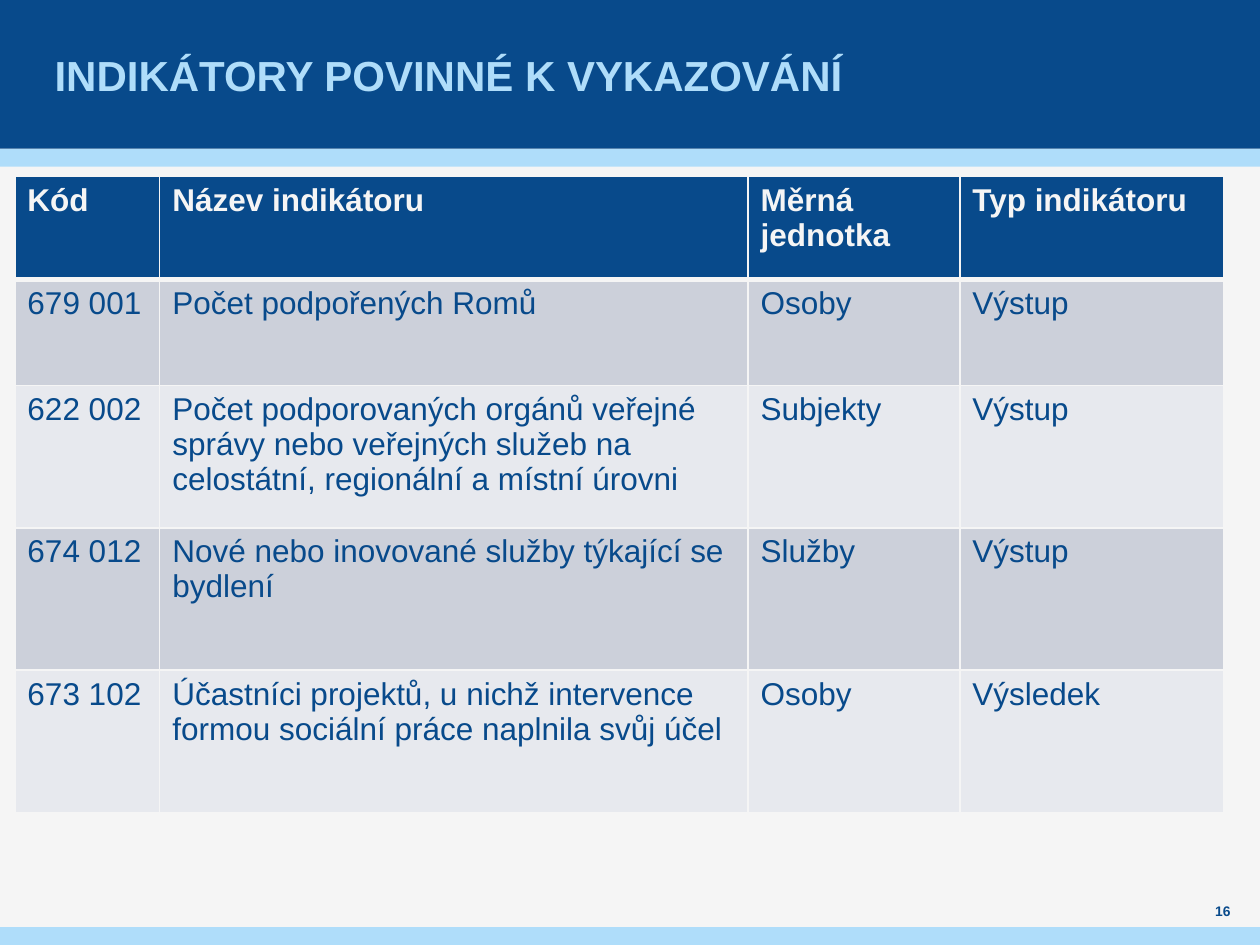
from dataclasses import dataclass

from pptx import Presentation
from pptx import util as u
from pptx.dml.color import RGBColor
from pptx.enum import shapes, text
from pptx.oxml import parse_xml
from pptx.oxml.ns import nsdecls

NAVY, SKY, PALE = "084A8B", "AFDDFA", "F5F5F5"
BANDS = ("CCD0DA", "E7E9EE")
WIDE, HIGH = 25.4, 19.05


@dataclass
class Bar:
    top: float
    high: float
    fill: str


@dataclass
class Style:
    size: float
    ink: str
    bold: bool = True


BARS = [Bar(3, 0.36, SKY), Bar(0, 3, NAVY), Bar(18.69, 0.36, SKY)]
COLS = (2.92, 11.86, 4.27, 5.33)
ROWS = (2.08, 2.13, 2.87, 2.87, 2.87)
DATA = [
    ("Kód", "Název indikátoru", "Měrná jednotka", "Typ indikátoru"),
    ("679 001", "Počet podpořených Romů", "Osoby", "Výstup"),
    ("622 002", "Počet podporovaných orgánů veřejné správy nebo veřejných "
     "služeb na celostátní, regionální a místní úrovni", "Subjekty", "Výstup"),
    ("674 012", "Nové nebo inovované služby týkající se bydlení",
     "Služby", "Výstup"),
    ("673 102", "Účastníci projektů, u nichž intervence formou sociální "
     "práce naplnila svůj účel", "Osoby", "Výsledek"),
]


def paint(color, code: str) -> None:
    color.rgb = RGBColor.from_string(code)


def flood(fill, code: str) -> None:
    fill.solid()
    paint(fill.fore_color, code)


def write(frame, words: str, style: Style, align=text.PP_ALIGN.LEFT) -> None:
    para = frame.paragraphs[0]
    para.alignment = align
    run = para.add_run()
    run.text = words
    font = run.font
    font.name, font.size, font.bold = "Arial", u.Pt(style.size), style.bold
    paint(font.color, style.ink)


def inset(frame, side: float) -> None:
    frame.margin_left = frame.margin_right = u.Cm(side)
    frame.margin_top = frame.margin_bottom = 0
    frame.vertical_anchor = text.MSO_ANCHOR.MIDDLE
    frame.auto_size = text.MSO_AUTO_SIZE.NONE
    frame.word_wrap = True


def place(shape, left: float, top: float, wide: float, high: float) -> None:
    shape.left, shape.top = u.Cm(left), u.Cm(top)
    shape.width, shape.height = u.Cm(wide), u.Cm(high)


def draw_bar(slide, bar: Bar) -> None:
    box = slide.shapes.add_shape(shapes.MSO_SHAPE.RECTANGLE, 0, u.Cm(bar.top),
                                 u.Cm(WIDE), u.Cm(bar.high))
    box.shadow.inherit = False
    flood(box.fill, bar.fill)
    box.line.fill.background()


def edge(cell, sides: dict) -> None:
    props = cell._tc.get_or_add_tcPr()
    for side, points in sides.items():
        props.append(parse_xml(
            f'<a:ln{side} {nsdecls("a")} w="{u.Pt(points)}"><a:solidFill>'
            f'<a:srgbClr val="{PALE}"/></a:solidFill></a:ln{side}>'))


def draw_table(slide, left: float, top: float) -> None:
    table = slide.shapes.add_table(
        len(ROWS), len(COLS), u.Cm(left), u.Cm(top),
        u.Cm(sum(COLS)), u.Cm(sum(ROWS))).table
    for col, wide in zip(table.columns, COLS):
        col.width = u.Cm(wide)
    for i, (row, high) in enumerate(zip(table.rows, ROWS)):
        row.height = u.Cm(high)
        head = i == 0
        style = Style(18, PALE if head else NAVY, head)
        for cell, words in zip(row.cells, DATA[i]):
            edge(cell, {"L": 1, "R": 1, "T": 3 if i == 1 else 1,
                        "B": 3 if head else 1})
            flood(cell.fill, NAVY if head else BANDS[(i - 1) % 2])
            write(cell.text_frame, words, style)


def main() -> None:
    deck = Presentation()
    deck.slide_width, deck.slide_height = u.Cm(WIDE), u.Cm(HIGH)
    slide = deck.slides.add_slide(deck.slide_layouts[5])
    flood(slide.background.fill, PALE)

    # Bars across the slide
    for bar in BARS:
        draw_bar(slide, bar)

    # Title, brought in front of the bars
    title = slide.shapes.title
    title.element.getparent().append(title.element)
    place(title, 1, 0, 23.4, 3)
    inset(title.text_frame, 0.1)
    write(title.text_frame, "INDIKÁTORY POVINNÉ K VYKAZOVÁNÍ", Style(24, SKY))

    # Page number
    page = slide.shapes.add_textbox(u.Cm(24), u.Cm(18.11), u.Cm(1.3), u.Cm(0.51))
    inset(page.text_frame, 0)
    write(page.text_frame, "16", Style(7.9, NAVY), text.PP_ALIGN.CENTER)

    # Indicator table
    draw_table(slide, 0.3, 3.56)
    deck.save("out.pptx")


if __name__ == "__main__":
    main()
